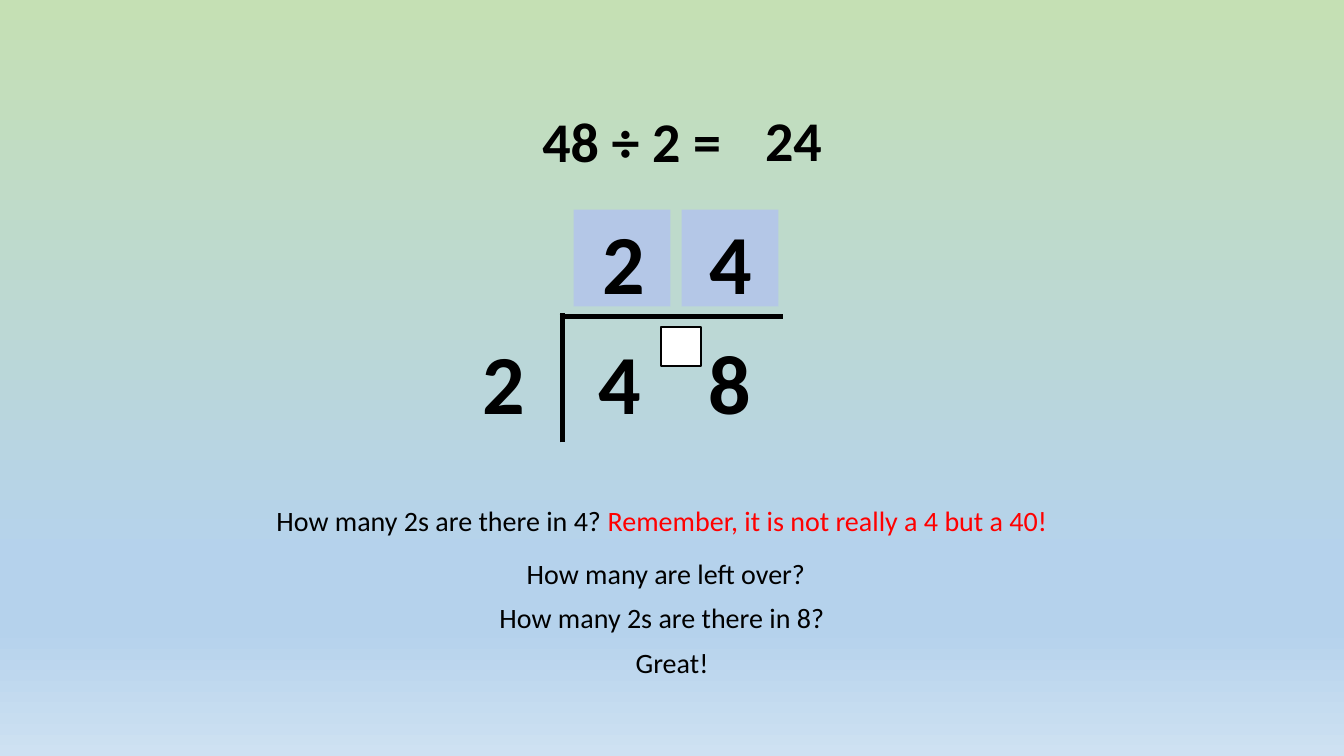
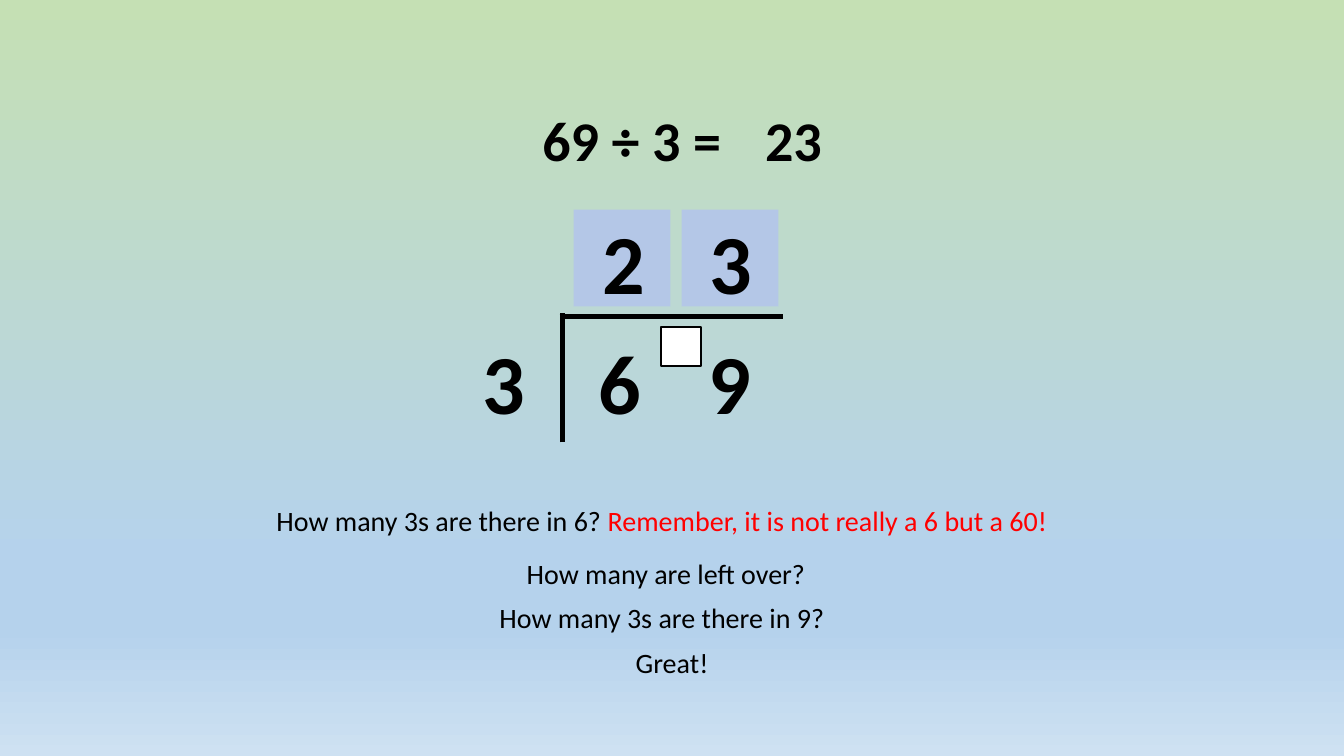
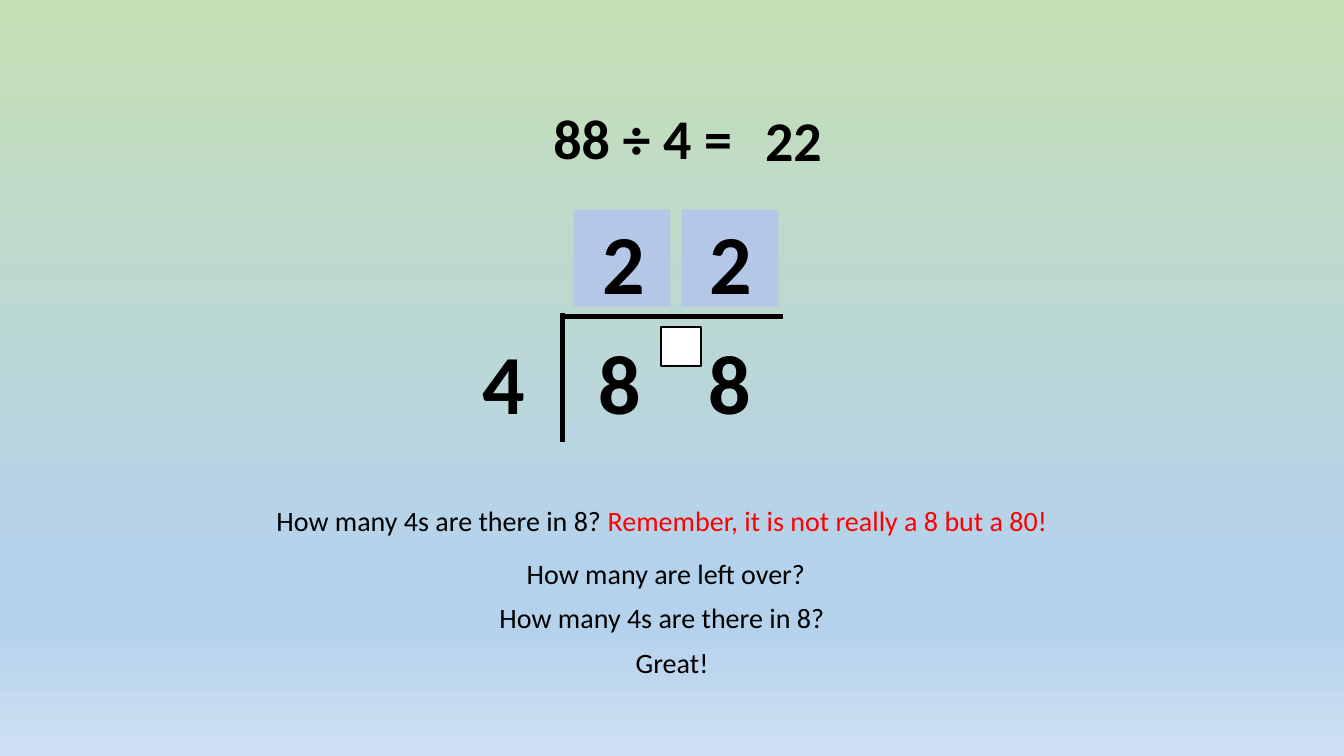
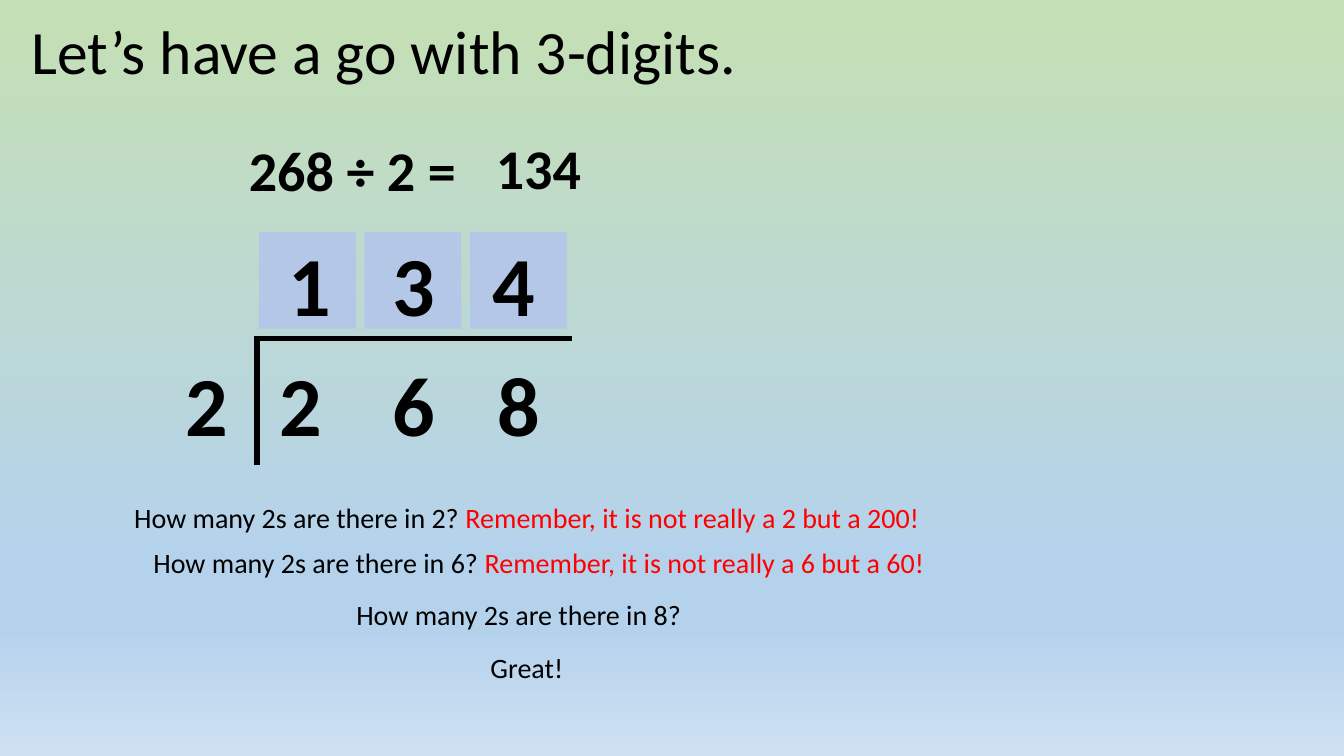
import copy
from dataclasses import dataclass

import pptx
import pptx.dml.color
import pptx.enum.shapes
import pptx.enum.text
import pptx.oxml.ns
import pptx.oxml.xmlchemy
import pptx.util
from pptx.util import Inches

ALIGN = pptx.enum.text.PP_ALIGN
RECT = pptx.enum.shapes.MSO_SHAPE.RECTANGLE


@dataclass(frozen=True)
class Theme:
    font: str = "Calibri"
    ink: str = "000000"
    warning: str = "FF0000"
    tile: str = "B4C7E7"
    carry: str = "FFFFFF"
    title_size: int = 44
    sum_size: int = 40
    digit_size: int = 60
    question_size: int = 20
    gradient: tuple = ((0, "C5E0B4"), (0.74, "B5D2EC"),
                       (0.83, "B5D2EC"), (1, "CEE1F2"))


@dataclass(frozen=True)
class Layout:
    """Places of one written division; (x, y) is the bracket's corner."""
    x: float
    y: float
    width: float
    divisor_x: float
    tile_x: float
    tile_pitch: float
    quotient_xs: tuple
    dividend_xs: tuple
    answer_box: tuple


THEME = Theme()
TWO_DIGITS = Layout(5.55, 3.14, 2.22, 4.58, 5.69, 1.07,
                    (5.77, 6.83), (5.73, 6.82), (7.49, 1, 0.85, 0.77))
THREE_DIGITS = Layout(2.52, 3.36, 3.15, 1.63, 2.57, 1.045,
                      (2.65, 3.68, 4.68), (2.56, 3.68, 4.73),
                      (4.82, 1.28, 1.24, 0.77))


def rgb(value):
    return pptx.dml.color.RGBColor.from_string(value)


def style(p, size, bold=False, align=ALIGN.CENTER):
    p.alignment = align
    p.font.name = THEME.font
    p.font.size = pptx.util.Pt(size)
    p.font.bold = bold
    p.font.color.rgb = rgb(THEME.ink)


def set_background(master):
    fill = master.background.fill
    fill.gradient()
    fill.gradient_angle = 270
    stops = master.element.find(".//" + pptx.oxml.ns.qn("a:gsLst"))
    while len(stops) < len(THEME.gradient):
        stops.append(copy.deepcopy(stops[0]))
    for stop, (position, color) in zip(fill.gradient_stops, THEME.gradient):
        stop.position = position
        stop.color.rgb = rgb(color)


def add_text(s, box, text, size, bold=False, align=ALIGN.CENTER):
    tf = s.shapes.add_textbox(*map(Inches, box)).text_frame
    tf.word_wrap = True
    tf.auto_size = pptx.enum.text.MSO_AUTO_SIZE.SHAPE_TO_FIT_TEXT
    p = tf.paragraphs[0]
    p.add_run().text = text
    style(p, size, bold, align)
    return p


def add_digit(s, left, top, digit):
    add_text(s, (left, top, 0.84, 1.11), str(digit), THEME.digit_size, bold=True)


def add_square(s, left, top, side, color, outlined=False):
    sp = s.shapes.add_shape(RECT, *map(Inches, (left, top, side, side)))
    sp.shadow.inherit = False
    sp.fill.solid()
    sp.fill.fore_color.rgb = rgb(color)
    if outlined:
        sp.line.color.rgb = rgb(THEME.ink)
        sp.line.width = pptx.util.Pt(1.5)
    else:
        sp.line.fill.background()


def add_bracket(s, x, y, width):
    group = s.shapes.add_group_shape()
    stem = x + 0.03
    for ends in ((stem, y + 1.25, stem, y - 0.03), (x, y, x + width, y)):
        line = group.shapes.add_connector(
            pptx.enum.shapes.MSO_CONNECTOR.STRAIGHT, *map(Inches, ends))
        line.line.color.rgb = rgb(THEME.ink)
        line.line.width = pptx.util.Pt(4)
        line._element.spPr.append(
            pptx.oxml.xmlchemy.OxmlElement("a:effectLst"))


def add_division(s, layout, dividend, divisor, sum_left, sum_top):
    quotient = dividend // divisor
    # The sum and its answer
    add_text(s, (sum_left, sum_top, 8.35, 0.77), f"{dividend} ÷ {divisor} =",
             THEME.sum_size, bold=True)
    add_text(s, layout.answer_box, str(quotient), THEME.sum_size, bold=True,
             align=ALIGN.LEFT)
    # The written method
    add_bracket(s, layout.x, layout.y, layout.width)
    add_digit(s, layout.divisor_x, layout.y + 0.09, divisor)
    for left, digit in zip(layout.dividend_xs, str(dividend)):
        add_digit(s, left, layout.y + 0.09, digit)
    for i, (left, digit) in enumerate(zip(layout.quotient_xs, str(quotient))):
        add_square(s, layout.tile_x + i * layout.tile_pitch, layout.y - 1.06,
                   0.96, THEME.tile)
        add_digit(s, left, layout.y - 1.1, digit)


def add_question(s, left, top, text, warning=None):
    p = add_text(s, (left, top, 8.35, 0.44), text, THEME.question_size)
    if warning:
        r = p.add_run()
        r.text = " " + warning
        r.font.color.rgb = rgb(THEME.warning)


def how_many(divisor, digit):
    return f"How many {divisor}s are there in {digit}?"


def remember(digit, place):
    return f"Remember, it is not really a {digit} but a {digit * place}!"


def two_digit_slide(prs, dividend, divisor, sum_left, sum_top):
    s = prs.slides.add_slide(prs.slide_layouts[6])
    add_division(s, TWO_DIGITS, dividend, divisor, sum_left, sum_top)
    tens, ones = divmod(dividend, 10)
    add_question(s, 2.39, 4.95, how_many(divisor, tens), remember(tens, 10))
    add_question(s, 2.43, 5.47, "How many are left over?")
    add_question(s, 2.39, 5.91, how_many(divisor, ones))
    add_question(s, 2.49, 6.35, "Great!")
    # Box for a carried digit
    add_square(s, 6.56, 3.24, 0.39, THEME.carry, outlined=True)


def add_title(s, text):
    title = s.shapes.title
    title.left, title.top, title.width, title.height = map(
        Inches, (0.21, -0.18, 11.5, 1.45))
    tf = title.text_frame
    tf.text = text
    tf.auto_size = pptx.enum.text.MSO_AUTO_SIZE.NONE
    tf.vertical_anchor = pptx.enum.text.MSO_ANCHOR.MIDDLE
    p = tf.paragraphs[0]
    p.line_spacing = 0.9
    style(p, THEME.title_size, align=ALIGN.LEFT)


def three_digit_slide(prs):
    s = prs.slides.add_slide(prs.slide_layouts[5])
    add_title(s, "Let’s have a go with 3-digits.")
    add_division(s, THREE_DIGITS, 268, 2, -0.68, 1.3)
    add_question(s, 1.05, 4.92, how_many(2, 2), remember(2, 100))
    add_question(s, 1.17, 5.36, how_many(2, 6), remember(6, 10))
    add_question(s, 0.97, 5.88, how_many(2, 8))
    add_question(s, 1.05, 6.4, "Great!")


def main():
    prs = pptx.Presentation()
    prs.slide_width, prs.slide_height = Inches(13.33), Inches(7.5)
    set_background(prs.slide_master)
    two_digit_slide(prs, 48, 2, 2.09, 1.01)
    two_digit_slide(prs, 69, 3, 2.09, 1)
    two_digit_slide(prs, 88, 4, 2.2, 0.98)
    three_digit_slide(prs)
    prs.save("out.pptx")


if __name__ == "__main__":
    main()
